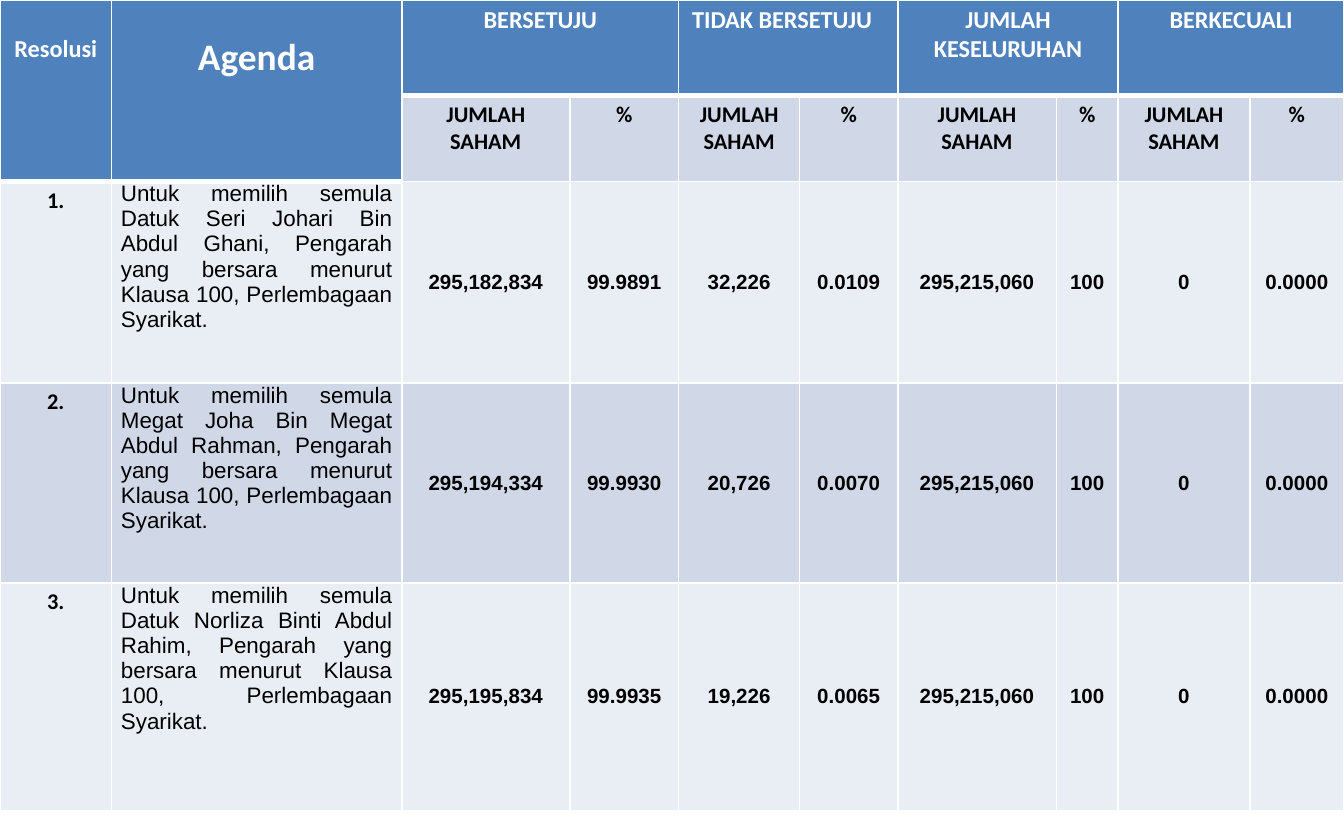
from typing import NamedTuple

from lxml import etree
from pptx import Presentation
from pptx import util as u
from pptx.dml.color import RGBColor
from pptx.enum import text
from pptx.oxml.ns import qn

PX = 9144  # 100 px to the inch
WHITE, BLACK = "FFFFFF", "000000"
BLUE, PALE, BAND = "4F81BD", "E9EDF4", "D0D8E8"
COLS = [83, 216, 125, 81, 90, 73, 118, 46, 98, 70]
ROWS = [71, 64, 150, 149, 169]
LEFT, MID, JUST = text.PP_ALIGN.LEFT, text.PP_ALIGN.CENTER, text.PP_ALIGN.JUSTIFY


class Style(NamedTuple):
    size: int
    color: str = BLACK
    font: str = "Calibri"
    bold: bool = True
    align: text.PP_ALIGN = MID
    side: int = 10
    top: int = 4
    foot: int = 4
    anchor: text.MSO_ANCHOR = text.MSO_ANCHOR.TOP


class Head(NamedTuple):
    label: str
    col: int
    high: int
    wide: int
    style: Style


class Vote(NamedTuple):
    num: str
    agenda: str
    vals: list[str]


HEAD = Style(13, WHITE)
LOW = HEAD._replace(top=26)
SUB = Style(12)
BODY = Style(12, font="Arial", bold=False, align=JUST, side=7, top=0, foot=0)
VALUE = BODY._replace(size=11, bold=True, align=MID, anchor=text.MSO_ANCHOR.MIDDLE)

HEADS = [
    Head("Resolusi", 0, 2, 1, LOW),
    Head("Agenda", 1, 2, 1, LOW._replace(size=20)),
    Head("BERSETUJU", 2, 1, 2, HEAD),
    Head("TIDAK BERSETUJU", 4, 1, 2, HEAD._replace(align=LEFT)),
    Head("JUMLAH KESELURUHAN", 6, 1, 2, HEAD),
    Head("BERKECUALI", 8, 1, 2, HEAD),
]
AGENDA = ("Untuk memilih semula {}, Pengarah yang bersara menurut "
          "Klausa 100, Perlembagaan Syarikat.")
VOTES = [
    Vote("1.", AGENDA.format("Datuk Seri Johari Bin Abdul Ghani"),
         ["295,182,834", "99.9891", "32,226", "0.0109"]),
    Vote("2.", AGENDA.format("Megat Joha Bin Megat Abdul Rahman"),
         ["295,194,334", "99.9930", "20,726", "0.0070"]),
    Vote("3.", AGENDA.format("Datuk Norliza Binti Abdul Rahim"),
         ["295,195,834", "99.9935", "19,226", "0.0065"]),
]
TOTALS = ["295,215,060", "100", "0", "0.0000"]


def rgb(code: str) -> RGBColor:
    return RGBColor.from_string(code)


def heavy(row: int, col: int) -> bool:
    """Tell whether the rule below this cell closes the header."""
    return row == 0 or (row == 1 and col < 2)


def edge(cell, side: str, points: int) -> None:
    props = cell._tc.get_or_add_tcPr()
    line = etree.SubElement(props, qn(f"a:ln{side}"), w=str(u.Pt(points)))
    fill = etree.SubElement(line, qn("a:solidFill"))
    etree.SubElement(fill, qn("a:srgbClr"), val=WHITE)


def paint(table, row: int, col: int, fill: str) -> None:
    cell = table.cell(row, col)
    if not cell.is_spanned:
        edge(cell, "L", 1)
        edge(cell, "R", 1)
        edge(cell, "T", 3 if row and heavy(row - 1, col) else 1)
        edge(cell, "B", 3 if heavy(row, col) else 1)
    cell.fill.solid()
    cell.fill.fore_color.rgb = rgb(fill)


def write(cell, label: str, style: Style) -> None:
    cell.margin_left = cell.margin_right = style.side * PX
    cell.margin_top, cell.margin_bottom = style.top * PX, style.foot * PX
    cell.vertical_anchor = style.anchor
    para = cell.text_frame.paragraphs[0]
    para.alignment = style.align
    run = para.add_run()
    run.text = label
    run.font.size, run.font.bold = u.Pt(style.size), style.bold
    run.font.name = style.font
    run.font.color.rgb = rgb(style.color)


def main() -> None:
    deck = Presentation()
    deck.slide_width, deck.slide_height = 1000 * PX, 625 * PX
    slide = deck.slides.add_slide(deck.slide_layouts[6])

    # Table grid
    frame = slide.shapes.add_table(len(ROWS), len(COLS), 0, 0,
                                   sum(COLS) * PX, sum(ROWS) * PX)
    table = frame.table
    table.first_row = table.horz_banding = False
    for col, wide in zip(table.columns, COLS):
        col.width = wide * PX
    for row, high in zip(table.rows, ROWS):
        row.height = high * PX

    # Merged headings
    for head in HEADS:
        cell = table.cell(0, head.col)
        cell.merge(table.cell(head.high - 1, head.col + head.wide - 1))
        write(cell, head.label, head.style)

    # Fills and rules
    for row in range(len(ROWS)):
        for col in range(len(COLS)):
            fill = BLUE if heavy(row, col) else BAND if row % 2 else PALE
            paint(table, row, col, fill)

    # Second heading row
    for col in range(2, len(COLS)):
        write(table.cell(1, col), "%" if col % 2 else "JUMLAH SAHAM", SUB)

    # Votes
    for row, vote in enumerate(VOTES, 2):
        write(table.cell(row, 0), vote.num, SUB)
        write(table.cell(row, 1), vote.agenda, BODY)
        for col, val in enumerate(vote.vals + TOTALS, 2):
            write(table.cell(row, col), val, VALUE)

    deck.save("out.pptx")


if __name__ == "__main__":
    main()
